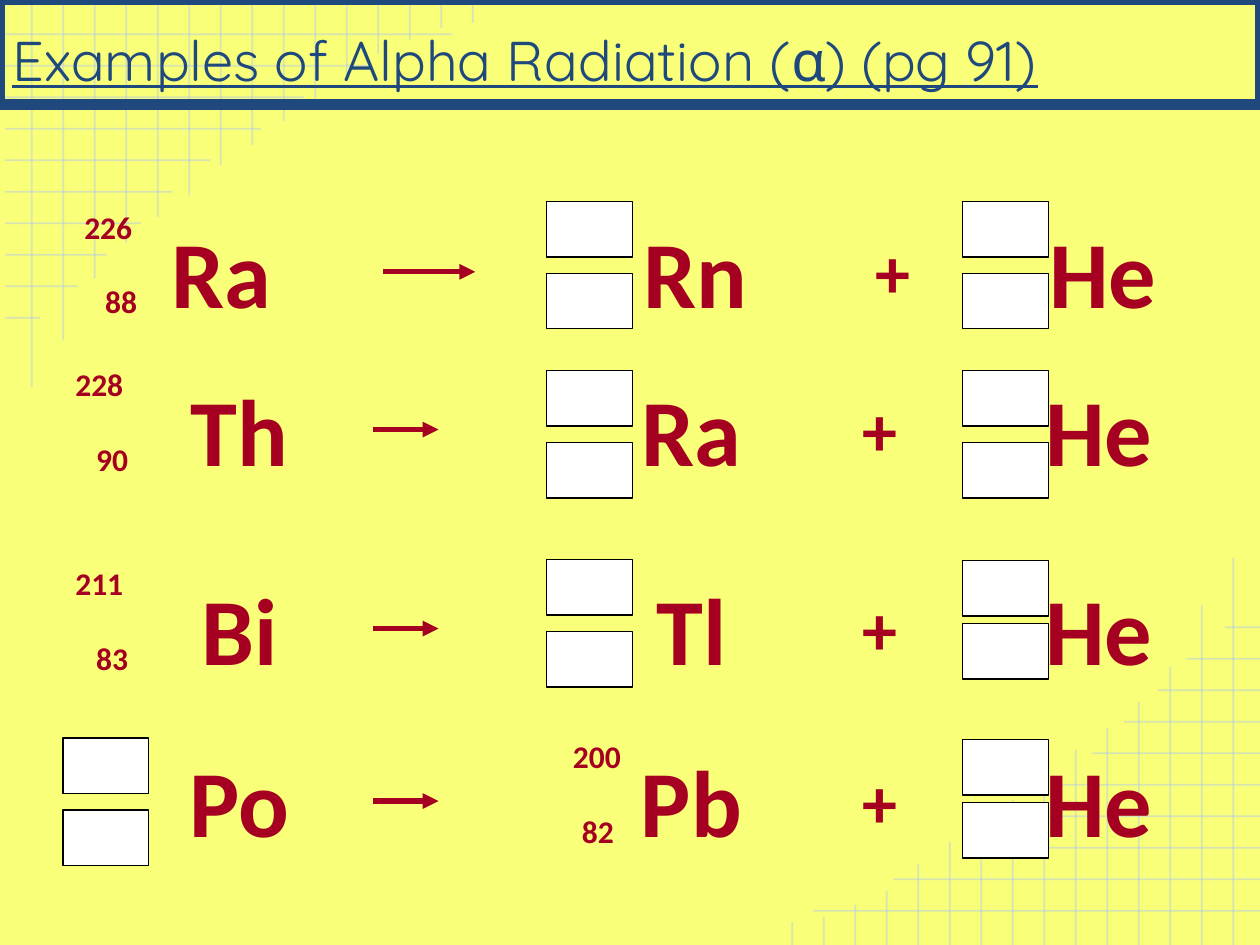
from collections import namedtuple

from lxml import etree
from pptx import Presentation
from pptx.dml.color import RGBColor
from pptx.enum import shapes, text
from pptx.oxml import ns
from pptx.util import Cm, Pt

YELLOW = RGBColor(0xFA, 0xFF, 0x79)
PALE_BLUE = RGBColor(0xB7, 0xCC, 0xE4)
NAVY = RGBColor(0x1F, 0x49, 0x7D)
RED = RGBColor(0xA5, 0x00, 0x21)
WHITE = RGBColor(0xFF, 0xFF, 0xFF)
BLACK = RGBColor(0, 0, 0)

WIDTH, HEIGHT = 25.4, 19.05
GRID_STEP = 2.54 / 4
ROW_ENDS = [9.12, 7.49, 6.12, 5.26, 4.24, 3.48, 2.84, 2.16, 1.57, 0.81]
COLUMN_ENDS = [7.8, 6.86, 5.61, 4.9, 4.37, 3.94, 3.33, 2.92,
               2.44, 2.08, 1.63, 1.09, 0.81, 0.56, 0.46]

Layout = namedtuple("Layout", "parent arrow arrow_end daughter plus helium")
WIDE = Layout(3.02, 6.27, 8.13, 12.57, 16.55, 20.78)
NARROW = Layout(3.56, 6.25, 7.57, 12.67, 16.46, 20.88)

EQUATIONS = [
    (1.45, 4.06, WIDE, "Ra", "Rn", 0, ("226", "88")),
    (1.27, 7.24, NARROW, "Th", "Ra", 0, ("228", "90")),
    (1.27, 11.25, NARROW, "Bi", "Tl", 0, ("211", "83")),
    (1.27, 14.73, NARROW, "Po", "Pb", 10.03, ("200", "82")),
]
PARENT_X, DAUGHTER_X, HELIUM_X = 1.27, 11.02, 19.41
BLANKS = [
    (DAUGHTER_X, 4.06, 1.45), (HELIUM_X, 4.06, 1.45),
    (DAUGHTER_X, 7.47, 1.45), (HELIUM_X, 7.47, 1.45),
    (DAUGHTER_X, 11.28, 1.45), (HELIUM_X, 11.3, 1.27),
    (PARENT_X, 14.88, 1.45), (HELIUM_X, 14.91, 1.27),
]


def add_line(s, x1, y1, x2, y2, color, width):
    line = s.shapes.add_connector(
        shapes.MSO_CONNECTOR.STRAIGHT, Cm(x1), Cm(y1), Cm(x2), Cm(y2))
    line.line.color.rgb = color
    line.line.width = Pt(width)
    etree.SubElement(line._element.spPr, ns.qn("a:effectLst"))
    return line


def add_label(s, x, y, w, h, label, size, align):
    tf = s.shapes.add_textbox(Cm(x), Cm(y), Cm(w), Cm(h)).text_frame
    tf.word_wrap = True
    tf.text = label
    p = tf.paragraphs[0]
    p.alignment = align
    font = p.runs[0].font
    font.name, font.size, font.bold = "Calibri", Pt(size), True
    font.color.rgb = RED


def add_corner_grid(s, left, top, sign):
    def grid_line(x1, y1, x2, y2):
        line = add_line(s, left + sign * x1, top + sign * y1,
                        left + sign * x2, top + sign * y2, PALE_BLUE, 1)
        color = line._element.spPr.find(".//" + ns.qn("a:srgbClr"))
        etree.SubElement(color, ns.qn("a:alpha"), val="53000")

    for i, end in enumerate(ROW_ENDS):
        y = 0.69 + i * GRID_STEP
        grid_line(0.1, y, end, y)
    for i, end in enumerate(COLUMN_ENDS):
        x = 0.64 + i * GRID_STEP
        grid_line(x, end, x, 0)


def add_title(s, left, top, width, height):
    sp = s.shapes.add_shape(shapes.MSO_SHAPE.RECTANGLE,
                            Cm(left), Cm(top), Cm(width), Cm(height))
    sp.shadow.inherit = False
    sp.fill.background()
    sp.line.color.rgb = NAVY
    sp.line.width = Pt(6)
    tf = sp.text_frame
    tf.word_wrap = True
    tf.vertical_anchor = text.MSO_ANCHOR.BOTTOM
    tf.margin_left = tf.margin_right = tf.margin_top = tf.margin_bottom = Cm(0.25)
    tf.text = "Examples of Alpha Radiation (α) (pg 91)"
    p = tf.paragraphs[0]
    p.alignment = text.PP_ALIGN.LEFT
    font = p.runs[0].font
    font.name, font.size, font.underline = "Quicksand", Pt(32), True
    font.color.rgb = NAVY


def add_equation(s, left, top, layout, parent, daughter, numbers_x, numbers):
    center = text.PP_ALIGN.CENTER
    symbols = [(layout.parent, parent), (layout.daughter, daughter),
               (layout.helium, "He")]
    for x, symbol in symbols:
        add_label(s, left + x - 1.98, top + 0.13, 3.96, 2.54, symbol, 54, center)
    add_label(s, left + layout.plus - 0.75, top + 0.43, 1.5, 1.95, "+", 40, center)
    y = top + 1.42
    arrow = add_line(s, left + layout.arrow, y, left + layout.arrow_end, y, RED, 3)
    etree.SubElement(arrow.line._get_or_add_ln(), ns.qn("a:tailEnd"), type="triangle")
    mass, atomic = numbers
    x = left + numbers_x
    indent = 0.18 if numbers_x else 0.42
    add_label(s, x, top, 1.78, 1.27, mass, 18, text.PP_ALIGN.LEFT)
    add_label(s, x + indent, top + 1.51, 1.35, 1.27, atomic, 18, text.PP_ALIGN.LEFT)


def add_blank_pair(s, left, top, pitch):
    for y in (top, top + pitch):
        sp = s.shapes.add_shape(shapes.MSO_SHAPE.RECTANGLE,
                                Cm(left), Cm(y), Cm(1.73), Cm(1.12))
        sp.shadow.inherit = False
        sp.fill.solid()
        sp.fill.fore_color.rgb = WHITE
        sp.line.color.rgb = BLACK
        sp.line.width = Pt(0.75)


def main():
    prs = Presentation()
    prs.slide_width, prs.slide_height = Cm(WIDTH), Cm(HEIGHT)
    s = prs.slides.add_slide(prs.slide_layouts[6])
    s.background.fill.solid()
    s.background.fill.fore_color.rgb = YELLOW
    add_corner_grid(s, 0, 0, 1)
    add_corner_grid(s, WIDTH + 0.1, HEIGHT, -1)
    add_title(s, 0, 0, WIDTH, 2.11)
    for equation in EQUATIONS:
        add_equation(s, *equation)
    for blank in BLANKS:
        add_blank_pair(s, *blank)
    prs.save("out.pptx")


if __name__ == "__main__":
    main()
